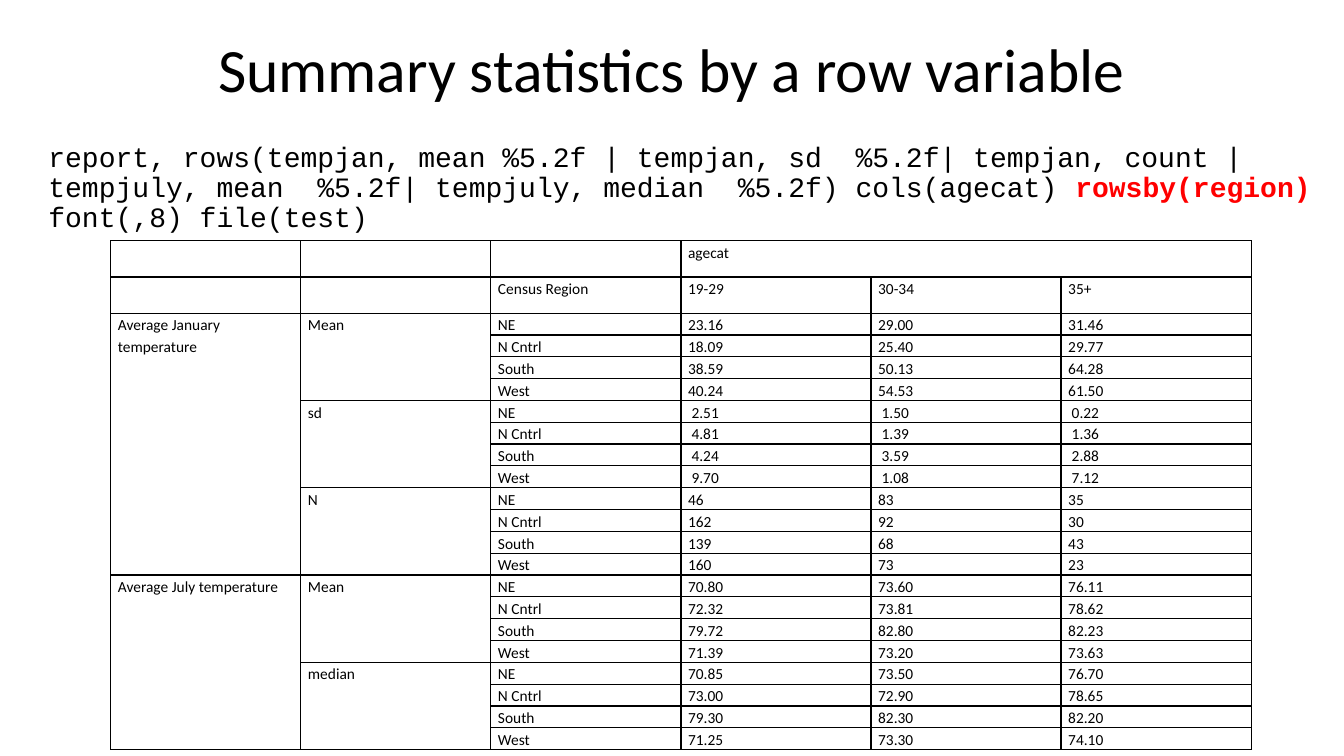
from lxml.etree import SubElement
from pptx import Presentation
from pptx.dml.color import RGBColor
from pptx.enum.text import MSO_ANCHOR, PP_ALIGN
from pptx.oxml.ns import qn
from pptx.util import Cm, Pt

BLACK = RGBColor(0, 0, 0)
RED = RGBColor(255, 0, 0)
REGIONS = ["NE", "N Cntrl", "South", "West"]
AGES = ["19-29", "30-34", "35+"]
COLUMNS = 6
HEADER_ROWS = 2
HEADER_HEIGHT = Cm(0.91)
ROW_HEIGHT = Cm(0.55)
COMMAND = [
    ("report, rows(tempjan, mean %5.2f | tempjan, sd  %5.2f| tempjan, count | "
     "tempjuly, mean  %5.2f| tempjuly, median  %5.2f) cols(agecat) ", BLACK, False),
    ("rowsby(region) ", RED, True),
    ("font(,8) file(test)", BLACK, False),
]
STATISTICS = {
    "Average January temperature": {
        "Mean": [["23.16", "29.00", "31.46"], ["18.09", "25.40", "29.77"],
                 ["38.59", "50.13", "64.28"], ["40.24", "54.53", "61.50"]],
        "sd": [[" 2.51", " 1.50", " 0.22"], [" 4.81", " 1.39", " 1.36"],
               [" 4.24", " 3.59", " 2.88"], [" 9.70", " 1.08", " 7.12"]],
        "N": [["46", "83", "35"], ["162", "92", "30"],
              ["139", "68", "43"], ["160", "73", "23"]],
    },
    "Average July temperature": {
        "Mean": [["70.80", "73.60", "76.11"], ["72.32", "73.81", "78.62"],
                 ["79.72", "82.80", "82.23"], ["71.39", "73.20", "73.63"]],
        "median": [["70.85", "73.50", "76.70"], ["73.00", "72.90", "78.65"],
                   ["79.30", "82.30", "82.20"], ["71.25", "73.30", "74.10"]],
    },
}


def add_span(para, text, font, size, color=BLACK, bold=False):
    """Add one styled run to a paragraph."""
    span = para.add_run()
    span.text = text
    span.font.name = font
    span.font.size = Pt(size)
    span.font.color.rgb = color
    span.font.bold = bold


def add_text_box(page, left, top, width, height, anchor):
    """Add a wrapping text box and return its first paragraph."""
    box = page.shapes.add_textbox(Cm(left), Cm(top), Cm(width), Cm(height))
    box.text_frame.word_wrap = True
    box.text_frame.vertical_anchor = anchor
    para = box.text_frame.paragraphs[0]
    para.line_spacing = 0.9
    return para


def style_cell(cell):
    """Give a cell its insets, black borders and no fill."""
    cell.margin_left = cell.margin_right = Cm(0.18)
    cell.margin_top = cell.margin_bottom = 0
    properties = cell._tc.get_or_add_tcPr()
    for side in ("lnL", "lnR", "lnT", "lnB"):
        line = SubElement(properties, qn(f"a:{side}"), w=str(Pt(1)))
        fill = SubElement(line, qn("a:solidFill"))
        SubElement(fill, qn("a:srgbClr"), val=str(BLACK))
    cell.fill.background()


def table_rows():
    """List the texts of every table row, with blanks where cells merge."""
    rows = [["", "", "", "agecat", "", ""], ["", "", "Census Region", *AGES]]
    for variable, measures in STATISTICS.items():
        for measure, lines in measures.items():
            for region, values in zip(REGIONS, lines):
                rows.append([variable, measure, region, *values])
                variable = measure = ""
    return rows


def merge_labels(table):
    """Merge the age heading and the variable and measure labels."""
    table.cell(0, 3).merge(table.cell(0, COLUMNS - 1))
    top = HEADER_ROWS
    for measures in STATISTICS.values():
        first = top
        for lines in measures.values():
            table.cell(top, 1).merge(table.cell(top + len(lines) - 1, 1))
            top += len(lines)
        table.cell(first, 0).merge(table.cell(top - 1, 0))


def add_statistics_table(page):
    """Add the table of temperatures by region and age."""
    rows = table_rows()
    height = HEADER_HEIGHT * HEADER_ROWS + ROW_HEIGHT * (len(rows) - HEADER_ROWS)
    frame = page.shapes.add_table(
        len(rows), COLUMNS, Cm(2.79), Cm(6.07), Cm(28.74), height)
    table = frame.table
    table.first_row = table.horz_banding = False
    for number, texts in enumerate(rows):
        table.rows[number].height = HEADER_HEIGHT if number < HEADER_ROWS else ROW_HEIGHT
        for cell, text in zip(table.rows[number].cells, texts):
            style_cell(cell)
            para = cell.text_frame.paragraphs[0]
            para.line_spacing = 1.15
            add_span(para, text, "Calibri", 11)
    merge_labels(table)


def main():
    """Build the slide and save the deck."""
    deck = Presentation()
    deck.slide_width, deck.slide_height = Cm(33.87), Cm(19.05)
    page = deck.slides.add_slide(deck.slide_layouts[6])
    title = add_text_box(page, 2.33, 0, 29.21, 3.68, MSO_ANCHOR.MIDDLE)
    title.alignment = PP_ALIGN.CENTER
    add_span(title, "Summary statistics by a row variable", "Calibri", 44)
    command = add_text_box(page, 0.97, 3.48, 32.59, 1.85, MSO_ANCHOR.TOP)
    command.space_before = Pt(10)
    for text, color, bold in COMMAND:
        add_span(command, text, "Courier New", 20, color, bold)
    add_statistics_table(page)
    deck.save("out.pptx")


if __name__ == "__main__":
    main()
